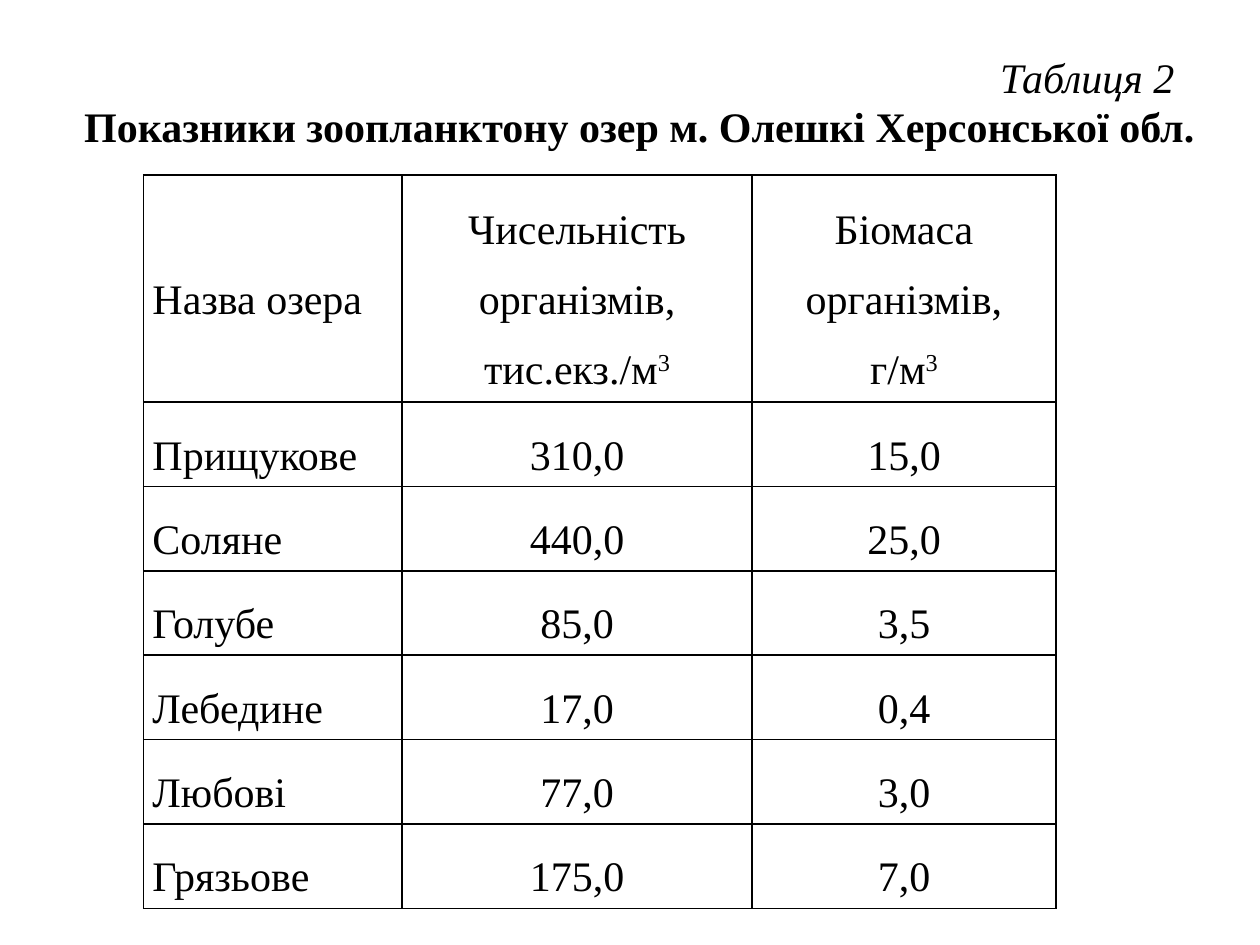
from dataclasses import dataclass

from lxml.etree import SubElement
from pptx import Presentation
from pptx.dml.color import RGBColor
from pptx.enum.text import MSO_ANCHOR as Anchor, PP_ALIGN as Align
from pptx.oxml.ns import qn
from pptx.util import Inches, Pt

BLACK = RGBColor(0, 0, 0)
FACE = "Times New Roman"
SIZE = Pt(24)
WIDTHS = (2.05, 2.78, 2.41)
HEAD_ROW, LAKE_ROW = 1.8, 0.67
EDGES = ("a:lnL", "a:lnR", "a:lnT", "a:lnB")


@dataclass(frozen=True)
class Piece:
    text: str
    bold: bool = False
    slant: bool = False
    power: bool = False


@dataclass(frozen=True)
class Label:
    left: float
    top: float
    width: float
    height: float
    piece: Piece
    align: Align
    anchor: Anchor
    wrap: bool


@dataclass(frozen=True)
class Lake:
    name: str
    count: str
    mass: str


LABELS = (
    Label(0.51, 0.68, 9.13, 0.63,
          Piece("Показники зоопланктону озер м. Олешкі Херсонської обл.", bold=True),
          Align.CENTER, Anchor.MIDDLE, True),
    Label(7.84, 0.36, 1.6, 0.5, Piece("Таблиця 2", slant=True),
          Align.LEFT, Anchor.TOP, False),
)

CUBE = Piece("3", power=True)
HEADS = (
    ((Piece("Назва озера"),),),
    ((Piece("Чисельність організмів, тис.екз./м"), CUBE),),
    ((Piece("Біомаса організмів,"),), (Piece("г/м"), CUBE)),
)

LAKES = (
    Lake("Прищукове", "310,0", "15,0"),
    Lake("Соляне", "440,0", "25,0"),
    Lake("Голубе", "85,0", "3,5"),
    Lake("Лебедине", "17,0", "0,4"),
    Lake("Любові", "77,0", "3,0"),
    Lake("Грязьове", "175,0", "7,0"),
)


def add_piece(para, piece: Piece) -> None:
    run = para.add_run()
    run.text = piece.text
    font = run.font
    font.name, font.size = FACE, SIZE
    font.bold, font.italic = piece.bold, piece.slant
    font.color.rgb = BLACK
    if piece.power:
        run._r.get_or_add_rPr().set("baseline", "30000")


def add_label(slide, label: Label) -> None:
    box = slide.shapes.add_textbox(Inches(label.left), Inches(label.top),
                                   Inches(label.width), Inches(label.height))
    frame = box.text_frame
    frame.word_wrap = label.wrap
    frame.vertical_anchor = label.anchor
    para = frame.paragraphs[0]
    para.alignment = label.align
    add_piece(para, label.piece)


def add_edges(cell) -> None:
    props = cell._tc.get_or_add_tcPr()
    for edge in EDGES:
        line = SubElement(props, qn(edge), w=str(Pt(1)))
        fill = SubElement(line, qn("a:solidFill"))
        SubElement(fill, qn("a:srgbClr"), val=str(BLACK))


def fill_cell(cell, lines: tuple, align: Align) -> None:
    add_edges(cell)
    cell.fill.background()
    cell.vertical_anchor = Anchor.MIDDLE
    cell.margin_left = cell.margin_right = Inches(0.07)
    cell.margin_top = cell.margin_bottom = Inches(0)
    frame = cell.text_frame
    for index, pieces in enumerate(lines):
        para = frame.add_paragraph() if index else frame.paragraphs[0]
        para.alignment = align
        para.line_spacing = 1.5
        for piece in pieces:
            add_piece(para, piece)


def add_grid(slide) -> None:
    rows = [HEADS] + [
        tuple(((Piece(text),),) for text in (lake.name, lake.count, lake.mass))
        for lake in LAKES
    ]
    tall = HEAD_ROW + LAKE_ROW * len(LAKES)
    table = slide.shapes.add_table(len(rows), len(WIDTHS), Inches(1.14), Inches(1.39),
                                   Inches(sum(WIDTHS)), Inches(tall)).table
    table.first_row = table.horz_banding = False
    for column, width in zip(table.columns, WIDTHS):
        column.width = Inches(width)
    for r, row in enumerate(rows):
        table.rows[r].height = Inches(LAKE_ROW if r else HEAD_ROW)
        for c, lines in enumerate(row):
            fill_cell(table.cell(r, c), lines, Align.CENTER if c else Align.LEFT)


def main() -> None:
    deck = Presentation()
    deck.slide_width, deck.slide_height = Inches(10), Inches(7.5)
    slide = deck.slides.add_slide(deck.slide_layouts[6])
    for label in LABELS:
        add_label(slide, label)
    add_grid(slide)
    deck.save("out.pptx")


if __name__ == "__main__":
    main()
